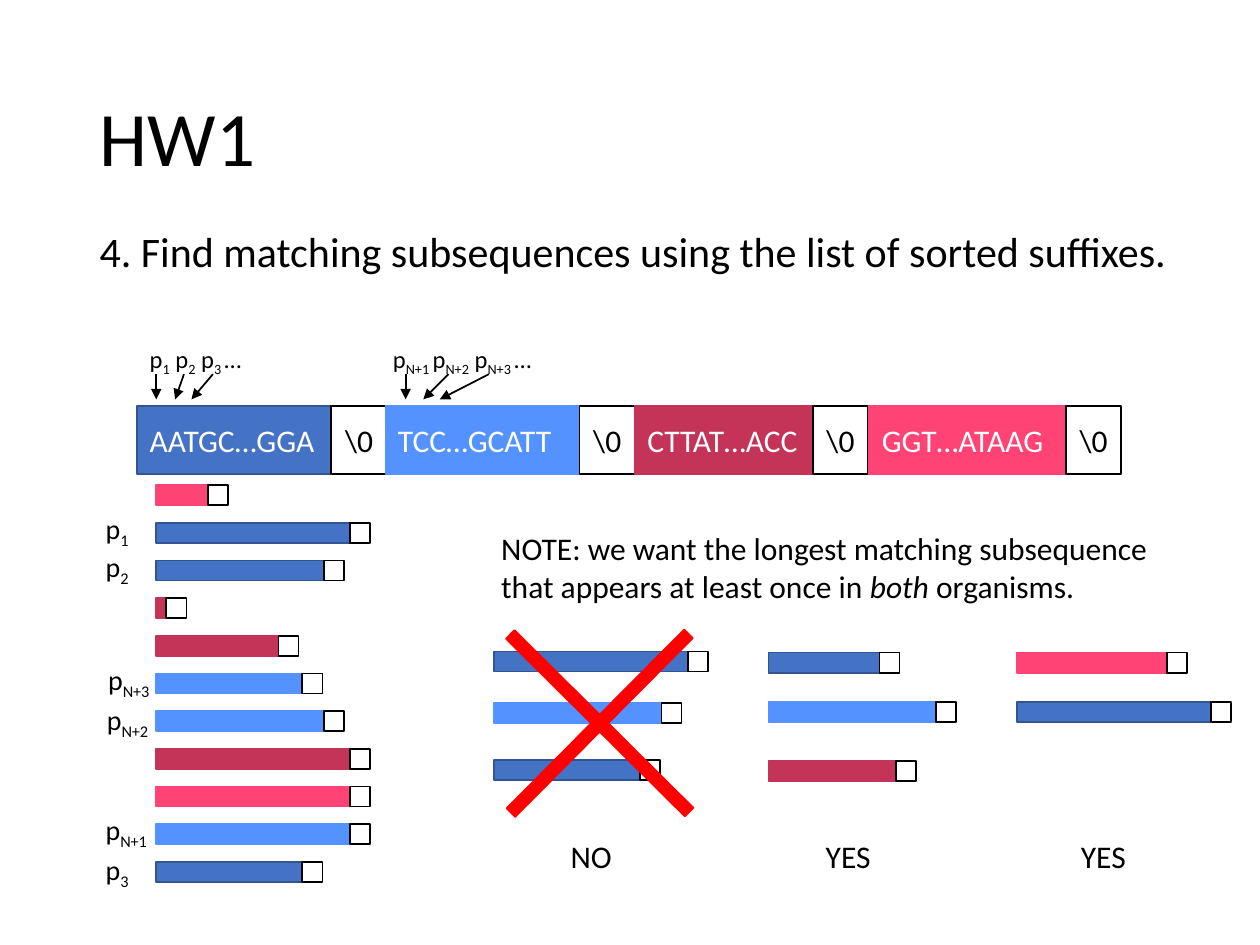
from dataclasses import dataclass

from lxml.etree import SubElement
from pptx import Presentation
from pptx.dml.color import RGBColor
from pptx.enum.shapes import MSO_CONNECTOR as Connector, MSO_SHAPE as Shape
from pptx.enum.text import MSO_ANCHOR as Anchor, MSO_AUTO_SIZE as AutoSize, PP_ALIGN as Align
from pptx.oxml.ns import qn
from pptx.util import Inches, Pt


@dataclass(frozen=True)
class Theme:
    font: str = "Calibri"
    black: str = "000000"
    white: str = "FFFFFF"
    red: str = "FF0000"
    # Sequences: fill and outline
    navy: tuple = ("4472C4", "325491")
    sky: tuple = ("5392FF", "5392FF")
    wine: tuple = ("C43458", "C43458")
    pink: tuple = ("FF4374", "FF4374")
    title_size: int = 44
    body_size: int = 24
    text_size: int = 18
    label_size: int = 16
    pointer_size: int = 14
    line_width: int = 1


class SlideBuilder:
    """Draws on a grid of 100 columns by 75 rows."""
    COLUMNS, ROWS = 100, 75

    def __init__(self, deck, theme):
        self.theme = theme
        self.column = deck.slide_width / self.COLUMNS
        self.row = deck.slide_height / self.ROWS
        self.slide = deck.slides.add_slide(deck.slide_layouts[1])

    def place(self, x, y, w, h):
        return (round(x * self.column), round(y * self.row),
                round(w * self.column), round(h * self.row))

    def style_run(self, run, size, color):
        run.font.name = self.theme.font
        run.font.size = Pt(size)
        run.font.color.rgb = RGBColor.from_string(color)

    def placeholder(self, index, text, area, size, anchor, line_spacing=1.0):
        holder = self.slide.placeholders[index]
        holder.left, holder.top, holder.width, holder.height = self.place(*area)
        frame = holder.text_frame
        frame.text = text
        frame.auto_size = AutoSize.NONE
        frame.vertical_anchor = anchor
        line = frame.paragraphs[0]
        line.alignment = Align.LEFT
        line.line_spacing = line_spacing
        line.space_before = Pt(0)
        properties = line._p.get_or_add_pPr()
        properties.set("marL", "0")
        properties.set("indent", "0")
        SubElement(properties, qn("a:buNone"))
        self.style_run(line.runs[0], size, self.theme.black)

    def label(self, text, area, size, wrap=False, italic=False):
        """Every second part between bars is a subscript, or italic on request."""
        box = self.slide.shapes.add_textbox(*self.place(*area))
        box.text_frame.word_wrap = wrap
        line = box.text_frame.paragraphs[0]
        for number, part in enumerate(text.split("|")):
            if not part:
                continue
            run = line.add_run()
            run.text = part
            self.style_run(run, size, self.theme.black)
            if number % 2 and italic:
                run.font.italic = True
            elif number % 2:
                run._r.get_or_add_rPr().set("baseline", "-25000")

    def block(self, area, fill, outline, text="", color=None, align=Align.LEFT,
              kind=Shape.RECTANGLE, parent=None):
        block = (parent or self.slide).shapes.add_shape(kind, *self.place(*area))
        block.shadow.inherit = False
        if fill:
            block.fill.solid()
            block.fill.fore_color.rgb = RGBColor.from_string(fill)
        else:
            block.fill.background()
        block.line.color.rgb = RGBColor.from_string(outline)
        block.line.width = Pt(self.theme.line_width)
        if text:
            frame = block.text_frame
            frame.text = text
            frame.vertical_anchor = Anchor.MIDDLE
            frame.paragraphs[0].alignment = align
            self.style_run(frame.paragraphs[0].runs[0], self.theme.text_size, color)
        return block

    def suffixes(self, x, bars):
        """Groups bars, each given as row, length and palette, with their end boxes."""
        group = self.slide.shapes.add_group_shape()
        side = 1.6
        for y, length, palette in bars:
            self.block((x, y, length, side), *palette, parent=group)
            self.block((x + length, y, side, side), None, self.theme.black, parent=group)

    def arrow(self, x1, y1, x2, y2):
        start_x, start_y, end_x, end_y = self.place(x1, y1, x2, y2)
        arrow = self.slide.shapes.add_connector(Connector.STRAIGHT, start_x, start_y, end_x, end_y)
        arrow.line.color.rgb = RGBColor.from_string(self.theme.black)
        arrow.line.width = Pt(self.theme.line_width)
        SubElement(arrow.line._get_or_add_ln(), qn("a:tailEnd"), type="triangle")
        SubElement(arrow._element.spPr, qn("a:effectLst"))

    def cross(self, area, thinness, angle):
        red = self.theme.red
        cross = self.block(area, red, red, kind=Shape.CROSS)
        cross.adjustments[0] = thinness
        cross.rotation = angle


def main():
    deck = Presentation()
    deck.slide_width, deck.slide_height = Inches(10), Inches(7.5)
    theme = Theme()
    page = SlideBuilder(deck, theme)
    navy, sky, wine, pink = theme.navy, theme.sky, theme.wine, theme.pink

    # Title and task
    page.placeholder(0, "HW1", (6.9, 4, 86.2, 14.5), theme.title_size, Anchor.MIDDLE, 0.9)
    page.placeholder(1, "4. Find matching subsequences using the list of sorted suffixes.",
                     (6.9, 17.4, 88.3, 5), theme.body_size, Anchor.TOP)

    # Joined sequences, each closed by a terminator
    strip_y, strip_h = 32.2, 5.4
    for x, width, sequence, palette in (
            (10.9, 15.4, "AATGC…GGA", navy), (30.6, 15.4, "TCC…GCATT", sky),
            (50.4, 14.1, "CTTAT…ACC", wine), (69, 15.6, "GGT…ATAAG", pink)):
        page.block((x, strip_y, width, strip_h), *palette, sequence, theme.white)
        page.block((x + width, strip_y, 4.4, strip_h), None, theme.black,
                   "\\0", theme.black, Align.CENTER)

    # Sorted suffixes
    first_y, pitch = 38.5, 2.99
    sorted_bars = ((4.1, pink), (15.4, navy), (13.3, navy), (0.8, wine), (9.7, wine),
                   (11.6, sky), (13.3, sky), (15.4, wine), (15.4, pink), (15.4, sky),
                   (11.6, navy))
    for rank, (length, palette) in enumerate(sorted_bars):
        page.suffixes(12.4, [(first_y + rank * pitch, length, palette)])

    # Pointers into the strip
    for text, x, width in (("p|1| p|2| p|3 |…", 10.9, 12.6),
                           ("p|N+1 |p|N+2| p|N+3 |…", 30.2, 27.5)):
        page.label(text, (x, 26.8, width, 3.4), theme.pointer_size)
    for start, end in ((12.4, 12.4), (14.6, 13.9), (16.9, 15.2),
                       (32.2, 32.2), (35.6, 33.6), (38.8, 34.9)):
        page.arrow(start, 29.7, end, 31.7)

    # Pointers beside the sorted suffixes
    for text, x, y in (("p|1| p|2", 7.4, 40.1), ("p|N+3", 7.6, 52.1), ("p|N+2", 7.5, 55.3),
                       ("p|N+1", 7.4, 64), ("p|3", 7.4, 67.2)):
        page.label(text, (x, y, 6, 3.7), theme.label_size)

    # Note
    page.label("NOTE: we want the longest matching subsequence that appears "
               "at least once in |both| organisms.",
               (38.8, 41.5, 55, 7.1), theme.text_size, wrap=True, italic=True)

    # Candidate matches and verdicts
    page.suffixes(39.2, [(51.7, 15.4, navy), (55.8, 13.3, sky), (60.3, 11.6, navy)])
    page.suffixes(61, [(51.8, 8.8, navy), (55.7, 13.3, sky), (60.4, 10.1, wine)])
    page.suffixes(80.7, [(51.8, 11.9, pink), (55.7, 15.4, navy)])
    page.cross((37.6, 47.4, 20, 20), 0.476, 314.8)
    for number, verdict in enumerate(("NO", "YES", "YES")):
        page.label(verdict, (44.3 + number * 20.25, 65.9, 7.7, 4), theme.text_size)

    deck.save("out.pptx")


if __name__ == "__main__":
    main()
